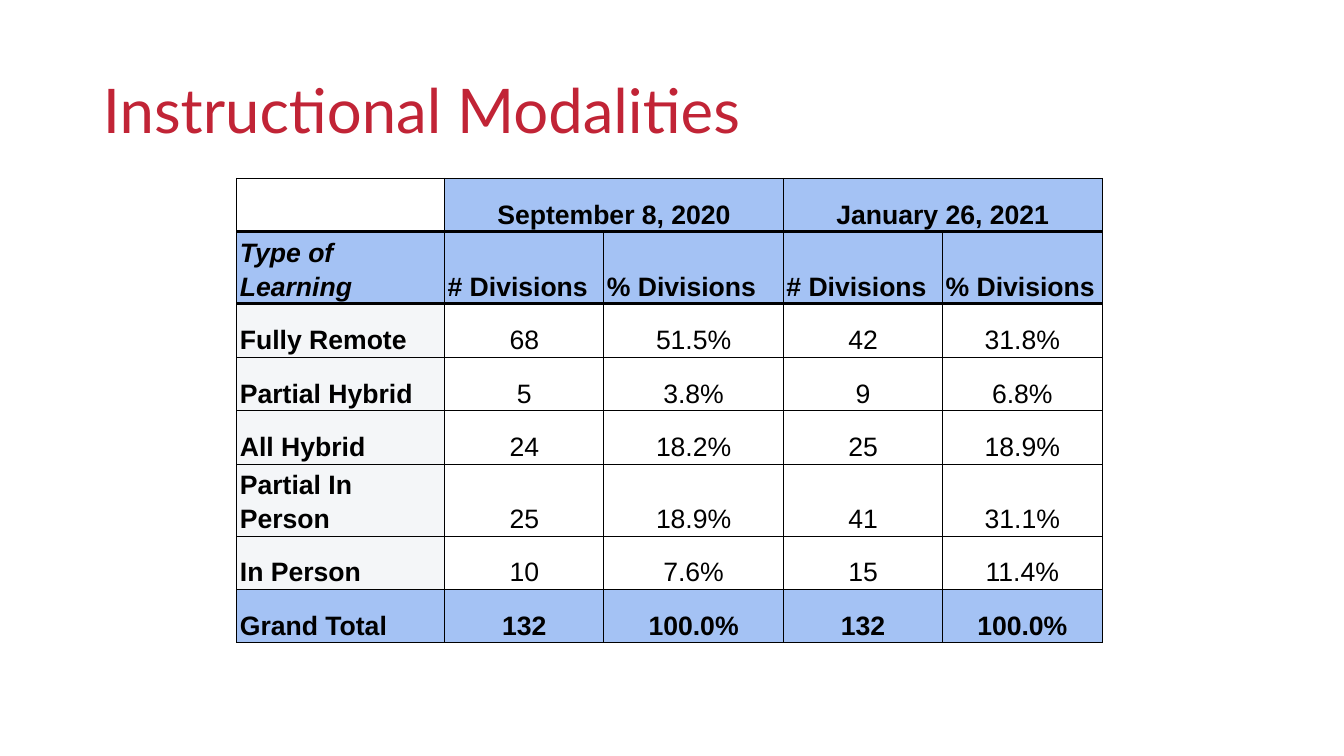
from dataclasses import dataclass

from lxml import etree
from pptx import Presentation
from pptx.dml.color import RGBColor
from pptx.enum.text import MSO_ANCHOR, PP_ALIGN
from pptx.oxml.ns import qn
from pptx.util import Inches, Pt

LEFT, CENTER = PP_ALIGN.LEFT, PP_ALIGN.CENTER
BOTTOM, MIDDLE = MSO_ANCHOR.BOTTOM, MSO_ANCHOR.MIDDLE
TITLE_ONLY = 5


@dataclass(frozen=True)
class Theme:
    title_font: str = "Lato"
    title_size: float = 44
    title_color: str = "C12436"
    table_font: str = "Arial"
    table_size: float = 19
    text_color: str = "000000"
    header_fill: str = "A4C2F4"
    label_fill: str = "F4F6F8"
    body_fill: str = "FFFFFF"
    border_color: str = "000000"
    thin: float = 0.75
    thick: float = 2.25


COLUMN_WIDTHS = [2.06, 1.58, 1.78, 1.58, 1.58]
ROW_HEIGHT = 0.53
ROWS = [
    ["", "September 8, 2020", "", "January 26, 2021", ""],
    ["Type of Learning"] + ["# Divisions", "% Divisions"] * 2,
    ["Fully Remote", "68", "51.5%", "42", "31.8%"],
    ["Partial Hybrid", "5", "3.8%", "9", "6.8%"],
    ["All Hybrid", "24", "18.2%", "25", "18.9%"],
    ["Partial In Person", "25", "18.9%", "41", "31.1%"],
    ["In Person", "10", "7.6%", "15", "11.4%"],
    ["Grand Total", "132", "100.0%", "132", "100.0%"],
]
DATE_ROW, HEADING_ROW, TOTAL_ROW = 0, 1, len(ROWS) - 1
DATE_COLUMNS = (1, 3)


class SlideBuilder:
    def __init__(self, slide, theme):
        self.slide = slide
        self.theme = theme

    def format_font(self, paragraph, name, size, color, bold=False, italic=False):
        for run in paragraph.runs:
            font = run.font
            font.name, font.size = name, Pt(size)
            font.bold, font.italic = bold, italic
            font.color.rgb = RGBColor.from_string(color)

    def add_title(self, text, left, top, width, height):
        title = self.slide.shapes.title
        title.left, title.top = Inches(left), Inches(top)
        title.width, title.height = Inches(width), Inches(height)
        frame = title.text_frame
        frame.text = text
        frame.word_wrap = True
        frame.vertical_anchor = MIDDLE
        paragraph = frame.paragraphs[0]
        paragraph.alignment = LEFT
        paragraph.line_spacing = 0.9
        theme = self.theme
        self.format_font(paragraph, theme.title_font, theme.title_size, theme.title_color)

    def add_modality_table(self, left, top):
        frame = self.slide.shapes.add_table(
            len(ROWS), len(COLUMN_WIDTHS), Inches(left), Inches(top),
            Inches(sum(COLUMN_WIDTHS)), Inches(ROW_HEIGHT * len(ROWS)))
        table = frame.table
        table.first_row = table.horz_banding = False
        for column, width in zip(table.columns, COLUMN_WIDTHS):
            column.width = Inches(width)
        for row in table.rows:
            row.height = Inches(ROW_HEIGHT)
        for column in DATE_COLUMNS:
            table.cell(DATE_ROW, column).merge(table.cell(DATE_ROW, column + 1))
        for row, texts in enumerate(ROWS):
            for column, text in enumerate(texts):
                cell = table.cell(row, column)
                self.set_borders(cell, row)
                self.fill_cell(cell, row, column)
                if text:
                    self.write_cell(cell, text, row, column)

    def set_borders(self, cell, row):
        """Draw thin edges, with thick rules below both header rows."""
        theme = self.theme
        top = theme.thick if row in (HEADING_ROW, HEADING_ROW + 1) else theme.thin
        bottom = theme.thick if row in (DATE_ROW, HEADING_ROW) else theme.thin
        edges = {"a:lnL": theme.thin, "a:lnR": theme.thin, "a:lnT": top, "a:lnB": bottom}
        properties = cell._tc.get_or_add_tcPr()
        for tag, width in edges.items():
            line = etree.SubElement(properties, qn(tag), w=str(Pt(width)))
            fill = etree.SubElement(line, qn("a:solidFill"))
            etree.SubElement(fill, qn("a:srgbClr"), val=theme.border_color)

    def fill_cell(self, cell, row, column):
        theme = self.theme
        if (row, column) == (DATE_ROW, 0):
            color = theme.body_fill
        elif row in (DATE_ROW, HEADING_ROW, TOTAL_ROW):
            color = theme.header_fill
        else:
            color = theme.body_fill if column else theme.label_fill
        cell.fill.solid()
        cell.fill.fore_color.rgb = RGBColor.from_string(color)

    def write_cell(self, cell, text, row, column):
        theme = self.theme
        cell.margin_left = cell.margin_right = Inches(0.03)
        cell.margin_top = cell.margin_bottom = Inches(0.02)
        cell.vertical_anchor = BOTTOM
        cell.text_frame.text = text
        paragraph = cell.text_frame.paragraphs[0]
        paragraph.alignment = LEFT if column == 0 or row == HEADING_ROW else CENTER
        paragraph.line_spacing = 1.15
        self.format_font(
            paragraph, theme.table_font, theme.table_size, theme.text_color,
            bold=column == 0 or row in (DATE_ROW, HEADING_ROW, TOTAL_ROW),
            italic=(row, column) == (HEADING_ROW, 0))


def main():
    presentation = Presentation()
    presentation.slide_width = Inches(13.33)
    presentation.slide_height = Inches(7.5)
    slide = presentation.slides.add_slide(presentation.slide_layouts[TITLE_ONLY])
    builder = SlideBuilder(slide, Theme())
    builder.add_title("Instructional Modalities", 0.92, 0.4, 11.5, 1.45)
    builder.add_modality_table(2.35, 1.77)
    presentation.save("out.pptx")


if __name__ == "__main__":
    main()
